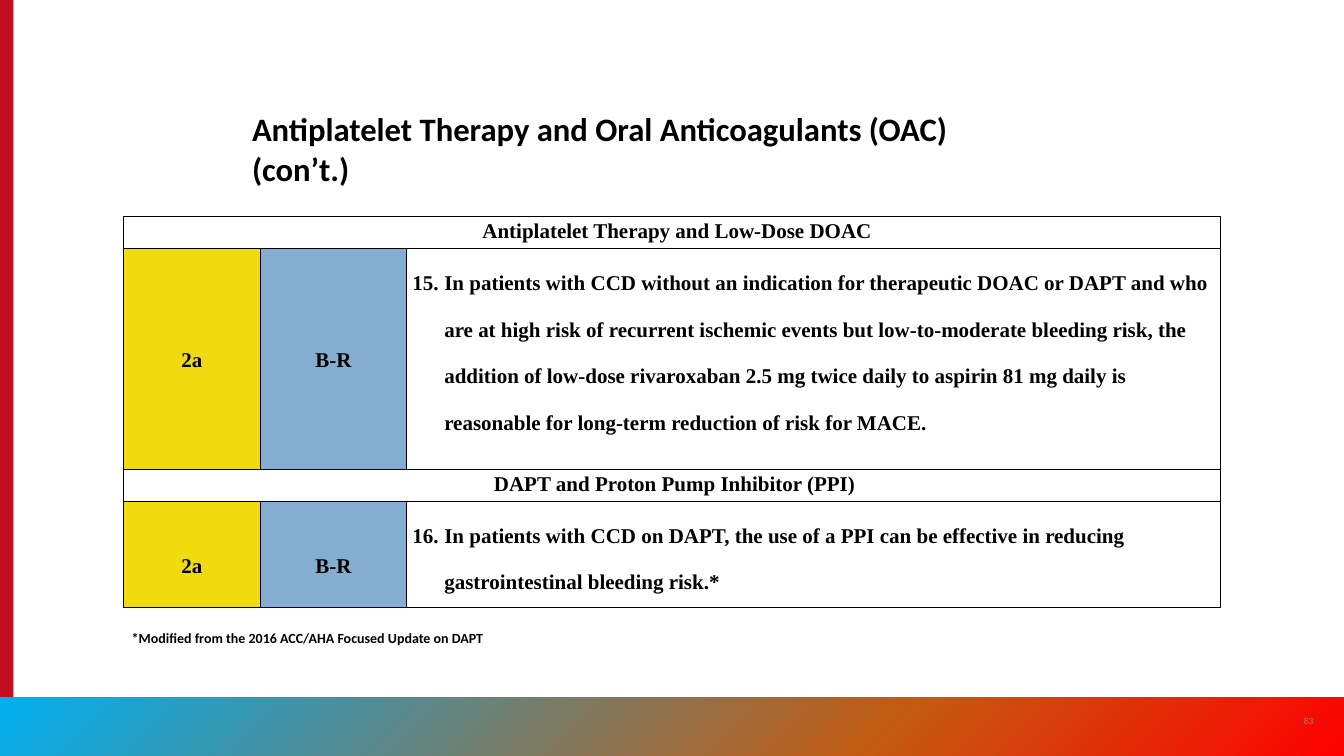
from dataclasses import dataclass
from typing import Optional

from lxml.etree import SubElement
from pptx import Presentation
from pptx.dml.color import RGBColor
from pptx.enum.shapes import MSO_SHAPE as Shape
from pptx.enum.text import MSO_ANCHOR as Anchor, MSO_AUTO_SIZE as AutoSize, PP_ALIGN as Align
from pptx.oxml import parse_xml
from pptx.oxml.ns import nsdecls, qn
from pptx.util import Inches, Pt

CELL = 0.1  # grid cell in inches: the slide is 160 columns by 90 rows


@dataclass(frozen=True)
class Theme:
    black: str = "000000"
    white: str = "FFFFFF"
    accent: str = "C10E21"
    grey: str = "8A8B8A"
    strength: str = "F0DA10"
    evidence: str = "85ADD1"
    footer: tuple = ((0, "00B0F0"), (66, "C55A11"), (100, "FF0000"))
    sans: str = "Calibri"
    serif: str = "Times New Roman"
    title_size: float = 28
    table_size: float = 18
    note_size: float = 12
    number_size: float = 8


@dataclass(frozen=True)
class Box:
    col: float
    row: float
    cols: float
    rows: float

    def lengths(self) -> tuple:
        return tuple(grid(n) for n in (self.col, self.row, self.cols, self.rows))


@dataclass(frozen=True)
class Recommendation:
    heading: str
    heading_shift: float
    number: int
    strength: str
    evidence: str
    advice: str
    rating_spacing: float
    rows: float


THEME = Theme()
HEADING_ROWS = 3.8
COLUMN_WIDTHS = (16.3, 17.4, 96.9)
RECOMMENDATIONS = (
    Recommendation(
        "Antiplatelet Therapy and Low-Dose DOAC", 1.2, 15, "2a", "B-R",
        "In patients with CCD without an indication for therapeutic DOAC or DAPT and who "
        "are at high risk of recurrent ischemic events but low-to-moderate bleeding risk, "
        "the addition of low-dose rivaroxaban 2.5 mg twice daily to aspirin 81 mg daily is "
        "reasonable for long-term reduction of risk for MACE.", 1.15, 26.3),
    Recommendation(
        "DAPT and Proton Pump Inhibitor (PPI)", 0.6, 16, "2a", "B-R",
        "In patients with CCD on DAPT, the use of a PPI can be effective in reducing "
        "gastrointestinal bleeding risk.*", 2.0, 12.6),
)


def grid(cells: float) -> int:
    return Inches(cells * CELL)


def style(paragraph, font: str, size: float, color: str, bold: bool = True,
          align=Align.LEFT, spacing: float = 1.0) -> None:
    paragraph.alignment, paragraph.line_spacing = align, spacing
    paragraph.space_before = Pt(0)
    for run in paragraph.runs:
        run.font.name, run.font.size, run.font.bold = font, Pt(size), bold
        run.font.color.rgb = RGBColor.from_string(color)


def add_bar(slide, box: Box):
    bar = slide.shapes.add_shape(Shape.RECTANGLE, *box.lengths())
    bar.shadow.inherit = False
    bar.line.fill.background()
    return bar


def fill_gradient(bar, stops: tuple, angle: int) -> None:
    bar.fill.gradient()
    old = bar._element.spPr.find(qn("a:gradFill"))
    marks = "".join(f'<a:gs pos="{share * 1000}"><a:srgbClr val="{color}"/></a:gs>'
                    for share, color in stops)
    old.getparent().replace(old, parse_xml(
        f'<a:gradFill rotWithShape="1" {nsdecls("a")}><a:gsLst>{marks}</a:gsLst>'
        f'<a:lin ang="{angle * 60000}" scaled="0"/></a:gradFill>'))


def add_label(slide, box: Box, text: str, size: float, color: str, **look) -> None:
    frame = slide.shapes.add_textbox(*box.lengths()).text_frame
    frame.word_wrap = True
    frame.vertical_anchor = Anchor.MIDDLE
    frame.text = text
    style(frame.paragraphs[0], THEME.sans, size, color, **look)


def format_cell(cell, fill: str) -> None:
    cell.margin_left = cell.margin_right = Inches(0.07)
    cell.margin_top = cell.margin_bottom = 0
    properties = cell._tc.get_or_add_tcPr()
    for side in ("lnL", "lnR", "lnT", "lnB"):
        line = SubElement(properties, qn(f"a:{side}"), w=str(Pt(1)))
        SubElement(SubElement(line, qn("a:solidFill")), qn("a:srgbClr"), val=THEME.black)
    cell.fill.solid()
    cell.fill.fore_color.rgb = RGBColor.from_string(fill)


def write_cell(cell, text: str, align, spacing: float, anchor=Anchor.TOP,
               left: float = 0, hanging: float = 0, number: Optional[int] = None) -> None:
    cell.text = text
    cell.vertical_anchor = anchor
    paragraph = cell.text_frame.paragraphs[0]
    properties = paragraph._p.get_or_add_pPr()
    properties.set("marL", str(grid(left)))
    properties.set("indent", str(-grid(hanging)))
    if number is not None:
        SubElement(properties, qn("a:buFont"), typeface="+mj-lt")
        SubElement(properties, qn("a:buAutoNum"), type="arabicPeriod", startAt=str(number))
    style(paragraph, THEME.serif, THEME.table_size, THEME.black, align=align, spacing=spacing)


def add_recommendations(slide, col: float, row: float) -> None:
    heights = [rows for item in RECOMMENDATIONS for rows in (HEADING_ROWS, item.rows)]
    box = Box(col, row, sum(COLUMN_WIDTHS), sum(heights))
    table = slide.shapes.add_table(len(heights), len(COLUMN_WIDTHS), *box.lengths()).table
    table.first_row = table.horz_banding = False
    for column, width in zip(table.columns, COLUMN_WIDTHS):
        column.width = grid(width)
    for table_row, height in zip(table.rows, heights):
        table_row.height = grid(height)

    for index, item in enumerate(RECOMMENDATIONS):
        heading = [table.cell(2 * index, c) for c in range(len(COLUMN_WIDTHS))]
        strength, evidence, advice = body = [
            table.cell(2 * index + 1, c) for c in range(len(COLUMN_WIDTHS))]
        for cell in heading:
            format_cell(cell, THEME.white)
        for cell, fill in zip(body, (THEME.strength, THEME.evidence, THEME.white)):
            format_cell(cell, fill)
        heading[0].merge(heading[-1])
        write_cell(heading[0], item.heading, Align.CENTER, 1.15, left=item.heading_shift)
        for cell, rating in ((strength, item.strength), (evidence, item.evidence)):
            write_cell(cell, rating, Align.CENTER, item.rating_spacing, Anchor.MIDDLE)
        write_cell(advice, item.advice, Align.LEFT, 2.0, left=3.8, hanging=3.8,
                   number=item.number)


def add_title(slide, box: Box, text: str) -> None:
    title = slide.shapes.title
    title.left, title.top, title.width, title.height = box.lengths()
    frame = title.text_frame
    frame.text = text
    frame.word_wrap = True
    frame.auto_size = AutoSize.NONE
    frame.vertical_anchor = Anchor.TOP
    for paragraph in frame.paragraphs:
        style(paragraph, THEME.sans, THEME.title_size, THEME.black)


def main() -> None:
    deck = Presentation()
    deck.slide_width, deck.slide_height = grid(160), grid(90)
    slide = deck.slides.add_slide(deck.slide_layouts[5])

    # Side bar and footer band
    side_bar = add_bar(slide, Box(0, 0, 1.6, 90))
    side_bar.fill.solid()
    side_bar.fill.fore_color.rgb = RGBColor.from_string(THEME.accent)
    fill_gradient(add_bar(slide, Box(0, 83, 160, 7)), THEME.footer, 45)
    add_label(slide, Box(153.4, 83.4, 4.8, 4.8), "83", THEME.number_size, THEME.grey,
              bold=False, align=Align.CENTER)

    # Title, recommendations and footnote
    add_title(slide, Box(29, 12.5, 102.1, 11.7),
              "Antiplatelet Therapy and Oral Anticoagulants (OAC)\n(con’t.)")
    add_recommendations(slide, 14.7, 25.8)
    add_label(slide, Box(14.7, 74.5, 51.6, 3),
              "*Modified from the 2016 ACC/AHA Focused Update on DAPT",
              THEME.note_size, THEME.black)

    deck.save("out.pptx")


if __name__ == "__main__":
    main()
